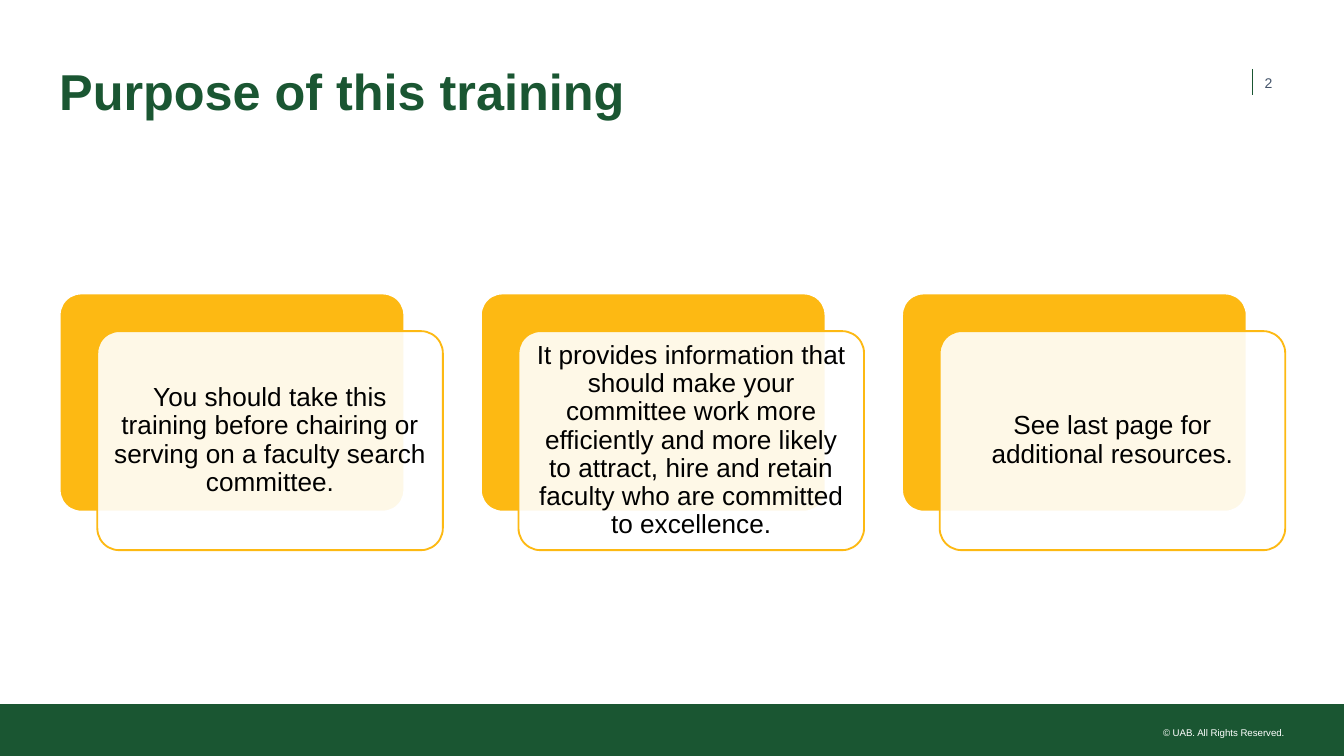
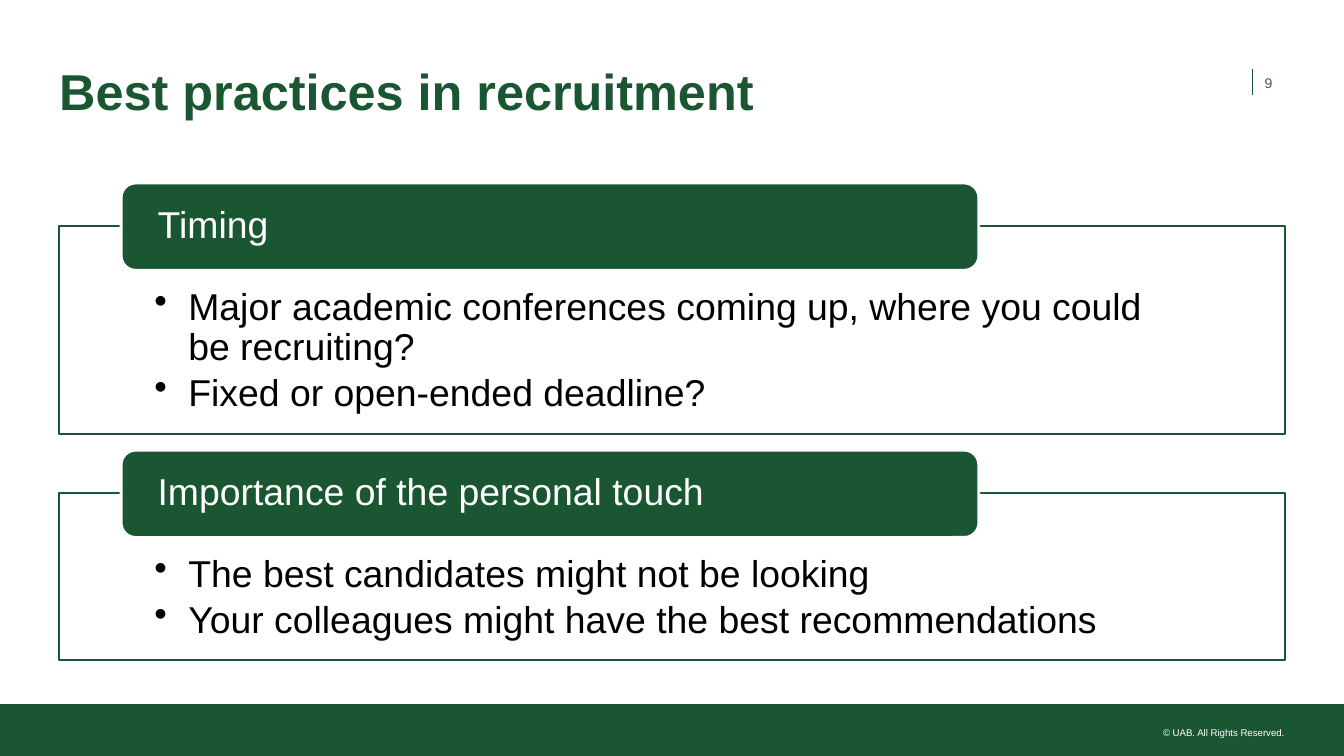
from dataclasses import dataclass

from lxml import etree
from pptx import Presentation
from pptx.dml.color import RGBColor
from pptx.enum.shapes import MSO_CONNECTOR, MSO_SHAPE
from pptx.enum.text import MSO_ANCHOR, PP_ALIGN
from pptx.oxml.ns import qn
from pptx.presentation import Presentation as Deck
from pptx.shapes.autoshape import Shape
from pptx.slide import Slide
from pptx.util import Cm, Pt

RECTANGLE = MSO_SHAPE.RECTANGLE
ROUNDED = MSO_SHAPE.ROUNDED_RECTANGLE
STRAIGHT = MSO_CONNECTOR.STRAIGHT
LEFT, CENTER, RIGHT = PP_ALIGN.LEFT, PP_ALIGN.CENTER, PP_ALIGN.RIGHT
TOP, MIDDLE = MSO_ANCHOR.TOP, MSO_ANCHOR.MIDDLE


@dataclass(frozen=True)
class Theme:
    font: str = "Arial"
    green: str = "1A5632"
    gold: str = "FDB913"
    white: str = "FFFFFF"
    black: str = "000000"
    slate: str = "44546A"
    title_size: float = 27
    panel_size: float = 20
    card_size: float = 14
    number_size: float = 7.5
    footer_size: float = 5.2
    thin_line: float = 1
    thick_line: float = 1.5
    panel_opacity: int = 90


THEME = Theme()


@dataclass(frozen=True)
class Area:
    """A rectangle in centimetres."""
    left: float
    top: float
    width: float
    height: float


@dataclass(frozen=True)
class TextStyle:
    size: float
    color: str
    bold: bool = False
    align: PP_ALIGN = LEFT
    anchor: MSO_ANCHOR = MIDDLE
    insets: tuple[float, float, float, float] = (0, 0, 0, 0)
    line_spacing: float = 0.9
    gap: float = 0
    bulleted: bool = False
    wrap: bool = True


@dataclass(frozen=True)
class Panel:
    heading: str
    points: tuple[str, ...]
    height: float


PAGE_WIDTH, PAGE_HEIGHT = 25.4, 14.29
MARGIN = 1.12
CONTENT_WIDTH = PAGE_WIDTH - 2 * MARGIN
BAND = Area(0, 13.31, PAGE_WIDTH, PAGE_HEIGHT - 13.31)
TITLE = Area(MARGIN, 0.99, 22.15, 1.6)
FOOTER = Area(21.92, 13.74, 2.36, 0.23)
PAGE_NUMBER = Area(23.9, 1.19, 0.64, 0.76)
DIVIDER_X, DIVIDER_TOP, DIVIDER_BOTTOM = 23.67, 1.3, 1.79

CARD_TOP, CARD_WIDTH, CARD_HEIGHT = 5.54, 6.53, 4.14
CARD_STEP, CARD_SHIFT = 7.96, 0.72
CARD_CORNER = 0.1

PANEL_TOP, PANEL_GAP = 4.27, 1.11
HEADING_INDENT, HEADING_RISE = 1.17, 0.81
HEADING_WIDTH, HEADING_HEIGHT = 16.21, 1.65
BULLET_INDENT = 0.64

TITLE_STYLE = TextStyle(THEME.title_size, THEME.green, bold=True)
NUMBER_STYLE = TextStyle(THEME.number_size, THEME.slate, line_spacing=1,
                         insets=(0, 0.13, 0, 0.13))
FOOTER_STYLE = TextStyle(THEME.footer_size, THEME.white, align=RIGHT, anchor=TOP,
                         line_spacing=1, wrap=False)
CARD_STYLE = TextStyle(THEME.card_size, THEME.black, align=CENTER,
                       insets=(0.15, 0.15, 0.15, 0.15))
HEADING_STYLE = TextStyle(THEME.panel_size, THEME.white, insets=(0.61, 0, 0.61, 0))
POINT_STYLE = TextStyle(THEME.panel_size, THEME.black, anchor=TOP, gap=3,
                        insets=(1.8, 1.17, 1.8, 0.41), bulleted=True)

CARDS = (
    "You should take this training before chairing or serving on a faculty "
    "search committee.",
    "It provides information that should make your committee work more "
    "efficiently and more likely to attract, hire and retain faculty who are "
    "committed to excellence.",
    "See last page for additional resources.",
)
PANELS = (
    Panel("Timing",
          ("Major academic conferences coming up, where you could be recruiting?",
           "Fixed or open-ended deadline?"), 3.94),
    Panel("Importance of the personal touch",
          ("The best candidates might not be looking",
           "Your colleagues might have the best recommendations"), 3.15),
)


def rgb(color: str) -> RGBColor:
    return RGBColor.from_string(color)


def lengths(area: Area) -> tuple[Cm, Cm, Cm, Cm]:
    return Cm(area.left), Cm(area.top), Cm(area.width), Cm(area.height)


def write(box: Shape, lines: tuple[str, ...], style: TextStyle) -> None:
    """Fill the box with one paragraph per line."""
    frame = box.text_frame
    frame.word_wrap = style.wrap
    frame.vertical_anchor = style.anchor
    (frame.margin_left, frame.margin_top,
     frame.margin_right, frame.margin_bottom) = map(Cm, style.insets)
    frame.text = "\n".join(lines)
    for index, para in enumerate(frame.paragraphs):
        para.alignment = style.align
        para.line_spacing = style.line_spacing
        if index:
            para.space_before = Pt(style.gap)
        if style.bulleted:
            properties = para._p.get_or_add_pPr()
            properties.set("marL", str(Cm(BULLET_INDENT)))
            properties.set("indent", str(-Cm(BULLET_INDENT)))
            etree.SubElement(properties, qn("a:buChar"), char="•")
        for span in para.runs:
            span.font.name = THEME.font
            span.font.size = Pt(style.size)
            span.font.bold = style.bold
            span.font.color.rgb = rgb(style.color)


def add_text(page: Slide, area: Area, text: str, style: TextStyle) -> None:
    write(page.shapes.add_textbox(*lengths(area)), (text,), style)


def add_block(page: Slide, kind: MSO_SHAPE, area: Area, fill: str,
              line: str | None = None, line_width: float = THEME.thin_line,
              opacity: int = 100) -> Shape:
    block = page.shapes.add_shape(kind, *lengths(area))
    block.shadow.inherit = False
    block.fill.solid()
    block.fill.fore_color.rgb = rgb(fill)
    if opacity < 100:
        color = block.element.spPr.find(f"{qn('a:solidFill')}/{qn('a:srgbClr')}")
        etree.SubElement(color, qn("a:alpha"), val=str(opacity * 1000))
    if line is None:
        block.line.fill.background()
    else:
        block.line.color.rgb = rgb(line)
        block.line.width = Pt(line_width)
    return block


def add_divider(page: Slide) -> None:
    divider = page.shapes.add_connector(
        STRAIGHT, Cm(DIVIDER_X), Cm(DIVIDER_TOP), Cm(DIVIDER_X), Cm(DIVIDER_BOTTOM))
    divider.line.color.rgb = rgb(THEME.green)
    divider.line.width = Pt(THEME.thin_line)
    etree.SubElement(divider.element.spPr, qn("a:effectLst"))


def add_page(deck: Deck, title: str, number: int) -> Slide:
    """Add a page with the title, page number and footer band."""
    page = deck.slides.add_slide(deck.slide_layouts[6])
    add_divider(page)
    add_block(page, RECTANGLE, BAND, THEME.green)
    add_text(page, FOOTER, "© UAB. All Rights Reserved.", FOOTER_STYLE)
    add_text(page, TITLE, title, TITLE_STYLE)
    add_text(page, PAGE_NUMBER, str(number), NUMBER_STYLE)
    return page


def add_card(page: Slide, left: float, text: str) -> None:
    back = add_block(page, ROUNDED, Area(left, CARD_TOP, CARD_WIDTH, CARD_HEIGHT),
                     THEME.gold, THEME.white, THEME.thick_line)
    front = add_block(
        page, ROUNDED,
        Area(left + CARD_SHIFT, CARD_TOP + CARD_SHIFT, CARD_WIDTH, CARD_HEIGHT),
        THEME.white, THEME.gold, opacity=THEME.panel_opacity)
    for block in (back, front):
        block.adjustments[0] = CARD_CORNER
    write(front, (text,), CARD_STYLE)


def add_panel(page: Slide, top: float, panel: Panel) -> None:
    body = add_block(page, RECTANGLE, Area(MARGIN, top, CONTENT_WIDTH, panel.height),
                     THEME.white, THEME.green, opacity=THEME.panel_opacity)
    write(body, panel.points, POINT_STYLE)
    heading = add_block(
        page, ROUNDED,
        Area(MARGIN + HEADING_INDENT, top - HEADING_RISE, HEADING_WIDTH, HEADING_HEIGHT),
        THEME.green, THEME.white, THEME.thick_line)
    write(heading, (panel.heading,), HEADING_STYLE)


def build_purpose(deck: Deck) -> None:
    page = add_page(deck, "Purpose of this training", 2)
    for index, text in enumerate(CARDS):
        add_card(page, MARGIN + index * CARD_STEP, text)


def build_recruitment(deck: Deck) -> None:
    page = add_page(deck, "Best practices in recruitment", 9)
    top = PANEL_TOP
    for panel in PANELS:
        add_panel(page, top, panel)
        top += panel.height + PANEL_GAP


def main() -> None:
    deck = Presentation()
    deck.slide_width, deck.slide_height = Cm(PAGE_WIDTH), Cm(PAGE_HEIGHT)
    build_purpose(deck)
    build_recruitment(deck)
    deck.save("out.pptx")


if __name__ == "__main__":
    main()
